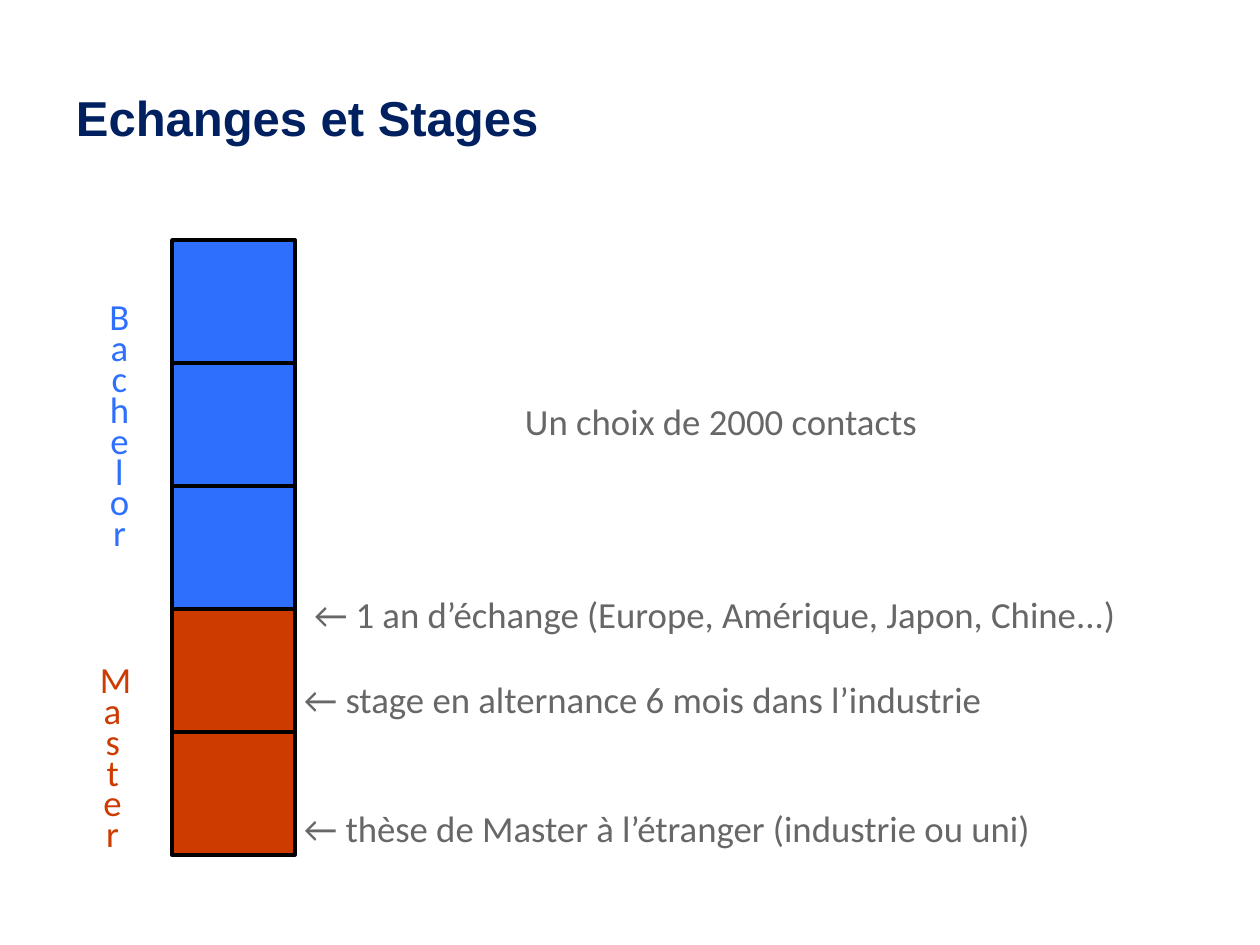
from pptx import Presentation
from pptx import util as u
from pptx.dml.color import RGBColor
from pptx.enum import shapes, text

SCALE = 914400 / 126
NAVY = RGBColor(0x00, 0x20, 0x60)
BLUE = RGBColor(0x2E, 0x6F, 0xFD)
RED = RGBColor(0xCE, 0x3B, 0x00)
GREY = RGBColor(0x67, 0x67, 0x67)
BLACK = RGBColor(0, 0, 0)
SIDE = 123


def px(*vals):
    return [u.Emu(round(v * SCALE)) for v in vals]


def add_box(slide, at, anchor, inset=0):
    frame = slide.shapes.add_textbox(*px(*at)).text_frame
    frame.word_wrap = True
    frame.vertical_anchor = anchor
    edge, = px(inset)
    frame.margin_left = frame.margin_right = edge
    frame.margin_top = frame.margin_bottom = edge
    return frame.paragraphs[0]


def add_run(para, words, color, size=21, face="Calibri", bold=False):
    run = para.add_run()
    run.text = words
    font = run.font
    font.size, font.name, font.bold = u.Pt(size), face, bold
    font.color.rgb = color


def add_title(slide, words):
    para = add_box(slide, (63, 38, 1134, 158), text.MSO_ANCHOR.MIDDLE, 13)
    add_run(para, words, NAVY, 28, "Arial", True)


def add_year(slide, row, color):
    box = slide.shapes.add_shape(shapes.MSO_SHAPE.RECTANGLE,
                                 *px(172, 240 + row * SIDE, SIDE, SIDE))
    box.shadow.inherit = False
    box.fill.solid()
    box.fill.fore_color.rgb = color
    box.line.color.rgb = BLACK
    box.line.width = u.Pt(2)


def add_level(slide, words, color, at):
    # The narrow box stacks the word letter by letter
    para = add_box(slide, at, text.MSO_ANCHOR.BOTTOM)
    para.alignment = text.PP_ALIGN.CENTER
    para.line_spacing = 0.7
    add_run(para, words, color)


def add_note(slide, words, left, top, width):
    para = add_box(slide, (left, top, width, 54), text.MSO_ANCHOR.BOTTOM)
    add_run(para, words, GREY)


def main():
    prs = Presentation()
    prs.slide_width, prs.slide_height = px(1260, 945)
    slide = prs.slides.add_slide(prs.slide_layouts[6])
    add_title(slide, "Echanges et Stages")

    # Column of study years
    for row, color in enumerate([BLUE] * 3 + [RED] * 2):
        add_year(slide, row, color)

    # Degree names
    add_level(slide, "Bachelor", BLUE, (107, 280, 25, 273))
    add_level(slide, "Master", RED, (100, 644, 25, 210))

    # Notes beside the years
    add_note(slide, "Un choix de 2000 contacts", 525, 389, 500)
    add_note(slide, "← 1 an d’échange (Europe, Amérique, Japon, Chine...)",
             314, 582, 900)
    add_note(slide, "← stage en alternance 6 mois dans l’industrie",
             304, 667, 823)
    add_note(slide, "← thèse de Master à l’étranger (industrie ou uni)",
             304, 796, 900)
    prs.save("out.pptx")


if __name__ == "__main__":
    main()
